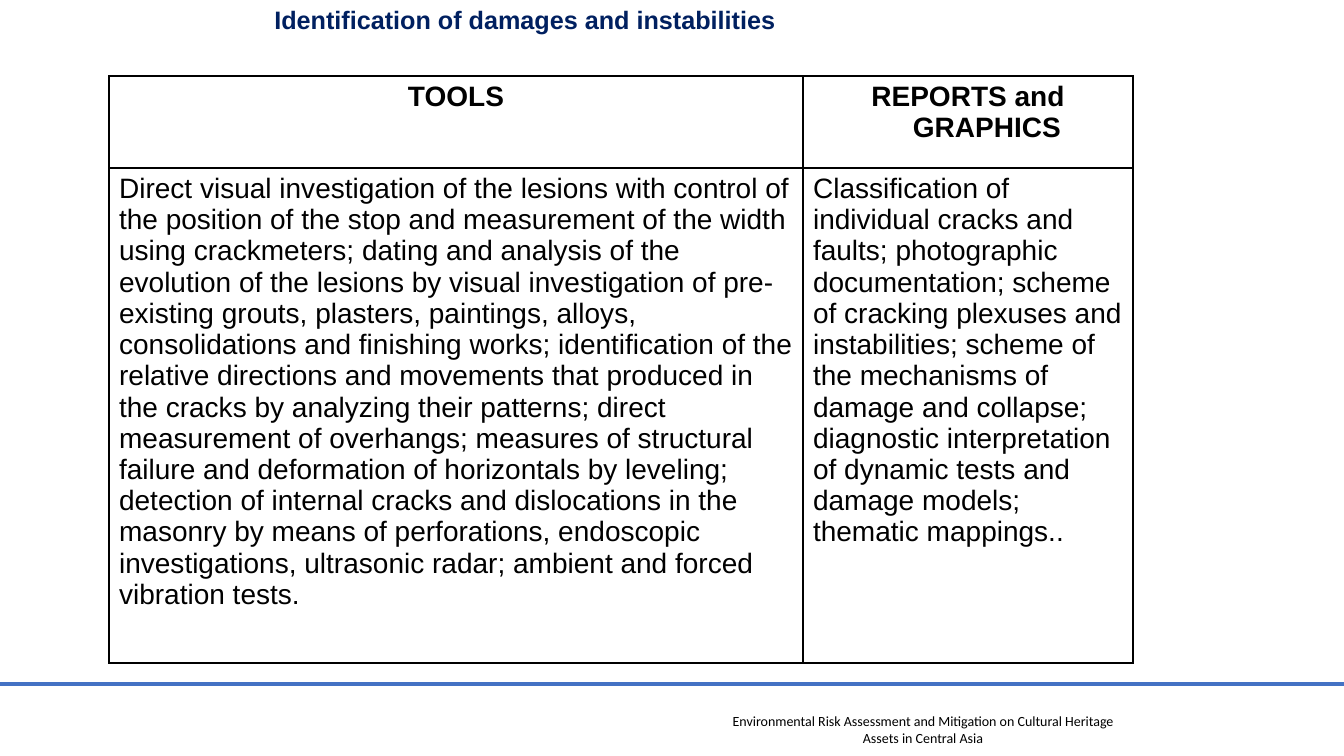
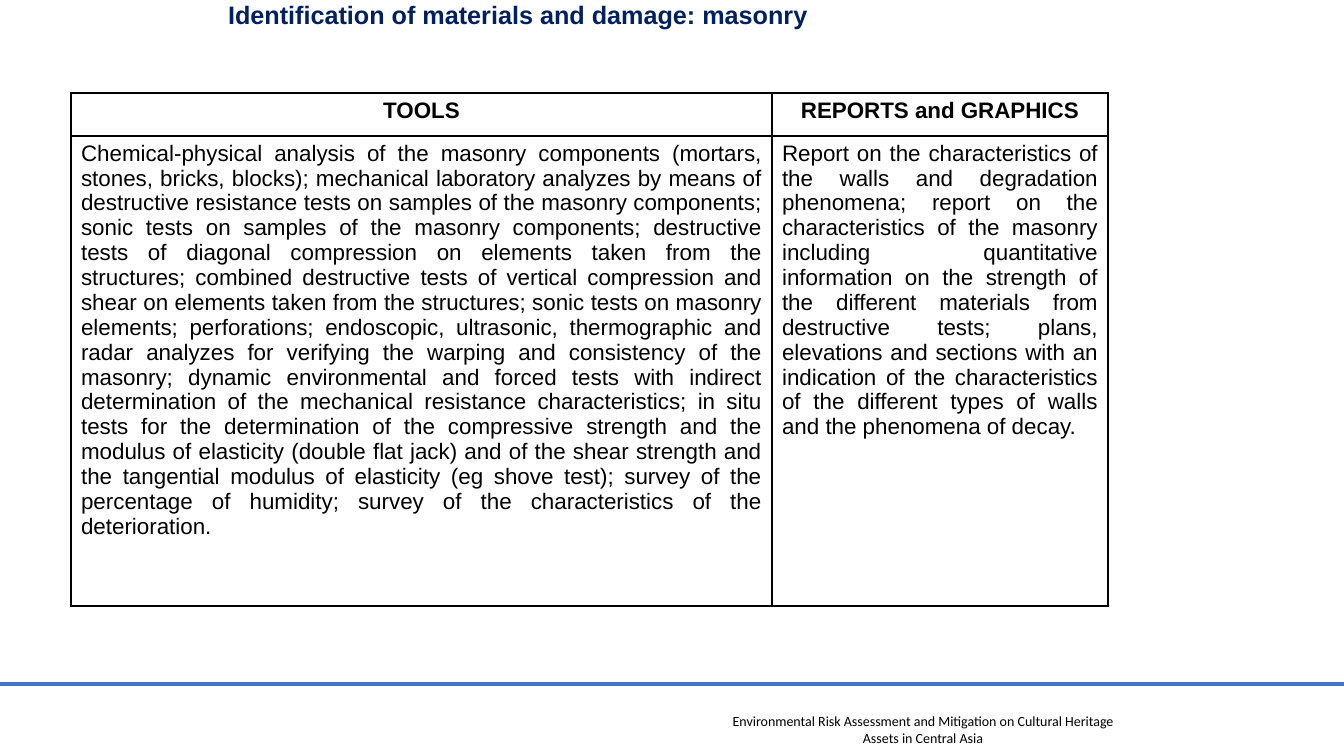
"""Build two slides of survey tools and reports tables."""
from lxml import etree
from pptx import Presentation
from pptx.dml.color import RGBColor
from pptx.enum.shapes import MSO_CONNECTOR as CONN, MSO_SHAPE as SHAPE
from pptx.enum.text import MSO_ANCHOR as ANCHOR, PP_ALIGN as ALIGN
from pptx.oxml.ns import qn
from pptx.util import Emu, Pt

PX = 914400 / 100.8
WIDTH, HEIGHT = 1344, 756
BLACK, WHITE, NAVY, BLUE = "000000", "FFFFFF", "002060", "4472C4"
HEADERS = [["TOOLS"], ["REPORTS and GRAPHICS"]]
HANGING = 38
FOOTER = "Environmental Risk Assessment and Mitigation on Cultural Heritage Assets in Central Asia"

SLIDES = [
    dict(
        title="Identification of damages and instabilities",
        title_box=(123, 0, 804, 66),
        origin=(109, 76), cols=(694, 330), rows=(92, 495),
        size=20, align=ALIGN.LEFT,
        body=[
            [
                "Direct visual investigation of the lesions with control of the position of the",
                "stop and measurement of the width using crackmeters; dating and analysis of the",
                "evolution of the lesions by visual investigation of pre-existing grouts, plasters,",
                "paintings, alloys, consolidations and finishing works; identification of the",
                "relative directions and movements that produced in the cracks by analyzing their",
                "patterns; direct measurement of overhangs; measures of structural failure and",
                "deformation of horizontals by leveling; detection of internal cracks and",
                "dislocations in the masonry by means of perforations, endoscopic investigations,",
                "ultrasonic radar; ambient and forced vibration tests.",
            ],
            [
                "Classification of individual cracks and faults; photographic documentation;",
                "scheme of cracking plexuses and instabilities; scheme of the mechanisms of damage",
                "and collapse; diagnostic interpretation of dynamic tests and damage models;",
                "thematic mappings..",
            ],
        ],
    ),
    dict(
        title="Identification of materials and damage: masonry",
        title_box=(126, -5, 784, 66),
        origin=(71, 93), cols=(701, 336), rows=(43, 470),
        size=16, align=ALIGN.JUSTIFY,
        body=[
            [
                "Chemical-physical analysis of the masonry components (mortars, stones, bricks,",
                "blocks); mechanical laboratory analyzes by means of destructive resistance tests",
                "on samples of the masonry components; sonic tests on samples of the masonry",
                "components; destructive tests of diagonal compression on elements taken from the",
                "structures; combined destructive tests of vertical compression and shear on",
                "elements taken from the structures; sonic tests on masonry elements; perforations;",
                "endoscopic, ultrasonic, thermographic and radar analyzes for verifying the warping",
                "and consistency of the masonry; dynamic environmental and forced tests with",
                "indirect determination of the mechanical resistance characteristics; in situ tests",
                "for the determination of the compressive strength and the modulus of elasticity",
                "(double flat jack) and of the shear strength and the tangential modulus of",
                "elasticity (eg shove test); survey of the percentage of humidity; survey of the",
                "characteristics of the deterioration.",
            ],
            [
                "Report on the characteristics of the walls and degradation phenomena; report on",
                "the characteristics of the masonry including quantitative information on the",
                "strength of the different materials from destructive tests; plans, elevations and",
                "sections with an indication of the characteristics of the different types of walls",
                "and the phenomena of decay.",
            ],
        ],
    ),
]


def rgb(color):
    return RGBColor.from_string(color)


def write(tf, text, size, font="Arial", color=BLACK, bold=False, align=ALIGN.CENTER, hanging=0):
    tf.word_wrap = True
    p = tf.paragraphs[0]
    p.alignment = align
    if hanging:
        pPr = p._p.get_or_add_pPr()
        pPr.set("marL", str(round(hanging * PX)))
        pPr.set("indent", str(-round(hanging * PX)))
    r = p.add_run()
    r.text = text
    r.font.name, r.font.size, r.font.bold = font, Pt(size), bold
    r.font.color.rgb = rgb(color)


prs = Presentation()
prs.slide_width, prs.slide_height = Emu(round(WIDTH * PX)), Emu(round(HEIGHT * PX))

for page in SLIDES:
    s = prs.slides.add_slide(prs.slide_layouts[6])

    footer = s.shapes.add_textbox(*[round(v * PX) for v in (708, 708, 430, 44)])
    write(footer.text_frame, FOOTER, 10, font="Calibri")

    rule = s.shapes.add_connector(CONN.STRAIGHT, *[round(v * PX) for v in (0, 684, WIDTH, 684)])
    rule.line.color.rgb = rgb(BLUE)
    rule.line.width = Pt(2.25)
    etree.SubElement(rule._element.spPr, qn("a:effectLst"))

    cols, rows = page["cols"], page["rows"]
    box = [round(v * PX) for v in (*page["origin"], sum(cols), sum(rows))]
    table = s.shapes.add_table(len(rows), len(cols), *box).table
    table.first_row = table.horz_banding = False
    for column, width in zip(table.columns, cols):
        column.width = Emu(round(width * PX))
    for row, height in zip(table.rows, rows):
        row.height = Emu(round(height * PX))

    for i, cells in enumerate([HEADERS, page["body"]]):
        header = i == 0
        for j, lines in enumerate(cells):
            cell = table.cell(i, j)
            write(cell.text_frame, " ".join(lines), page["size"], bold=header,
                  align=ALIGN.CENTER if header else page["align"],
                  hanging=HANGING if header else 0)
            tcPr = cell._tc.get_or_add_tcPr()
            for side in ("lnL", "lnR", "lnT", "lnB"):
                ln = etree.SubElement(tcPr, qn(f"a:{side}"), w=str(Pt(1)))
                fill = etree.SubElement(ln, qn("a:solidFill"))
                etree.SubElement(fill, qn("a:srgbClr"), val=BLACK)
            cell.fill.solid()
            cell.fill.fore_color.rgb = rgb(WHITE)

    sp = s.shapes.add_shape(SHAPE.RECTANGLE, *[round(v * PX) for v in page["title_box"]])
    sp.shadow.inherit = False
    sp.fill.solid()
    sp.fill.fore_color.rgb = sp.line.color.rgb = rgb(WHITE)
    sp.line.width = Pt(1)
    tf = sp.text_frame
    tf.vertical_anchor = ANCHOR.TOP
    tf.margin_top = Emu(round(4 * PX))
    write(tf, page["title"], 18, color=NAVY, bold=True)

prs.save("out.pptx")
